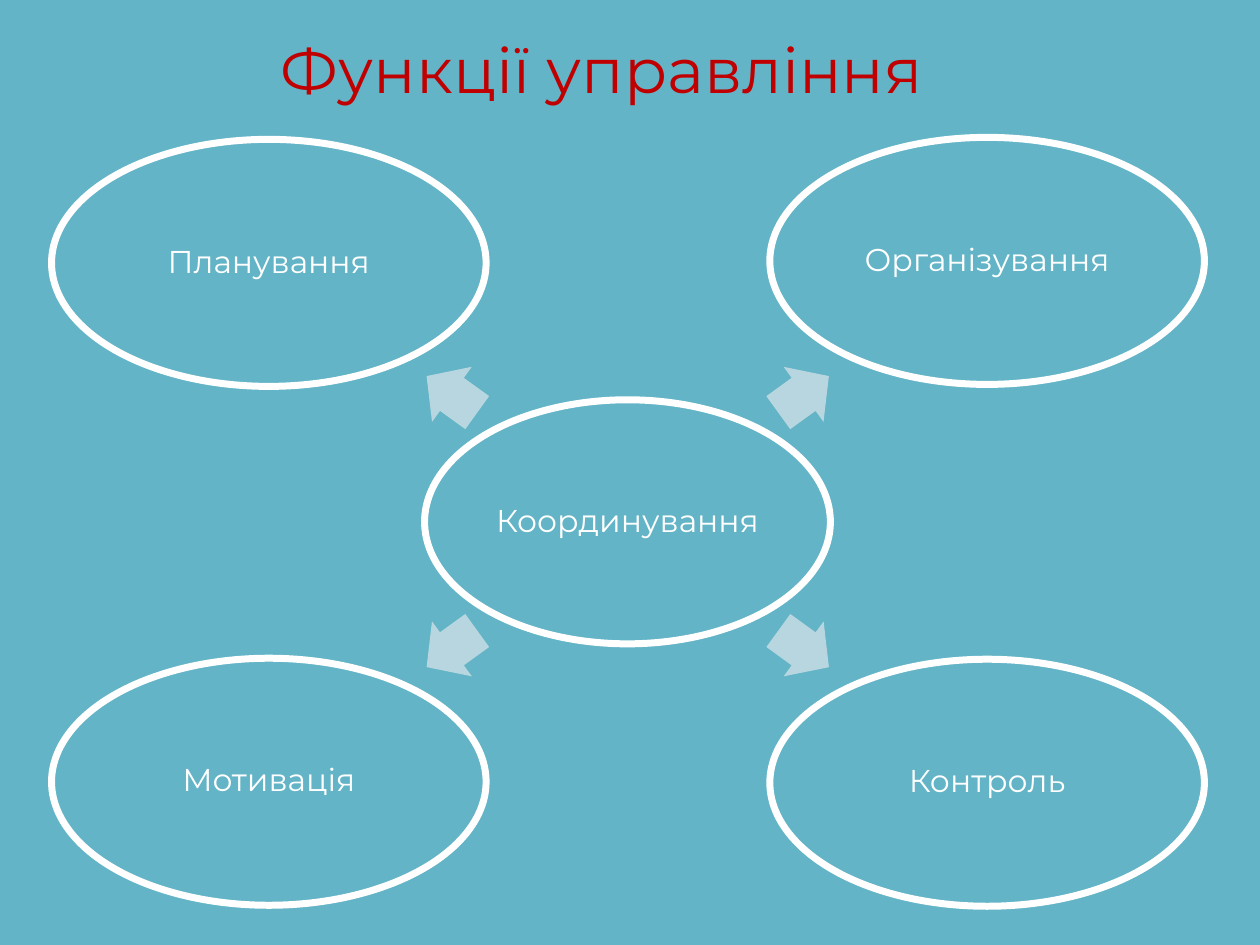
from pptx import Presentation
from pptx.dml.color import RGBColor
from pptx.enum import shapes, text
from pptx.util import Cm, Pt

TEAL = RGBColor(0x62, 0xB4, 0xC6)
PALE = RGBColor(0xB7, 0xD6, 0xDF)
WHITE = RGBColor(0xFF, 0xFF, 0xFF)
RED = RGBColor(0xC0, 0x00, 0x00)
FONT = "Montserrat"

# Centres and sizes in centimetres
HUB = ("Координування", 12.65, 10.52)
HUB_SIZE = (8.18, 4.92)
OUTER_SIZE = (8.76, 4.98)
ARROW_SIZE = (1.26, 1.37)

# Label, ellipse centre, arrow centre, arrow rotation
FUNCTIONS = [
    ("Планування", (5.42, 5.3), (9.11, 7.95), 215.8),
    ("Організування", (19.9, 5.26), (16.2, 7.95), 324.1),
    ("Контроль", (19.9, 15.78), (16.2, 13.08), 36),
    ("Мотивація", (5.42, 15.76), (9.11, 13.08), 144.1),
]


def set_attributes(target, values):
    for name, value in values.items():
        setattr(target, name, value)


def write(frame, content, size, color, align, **frame_format):
    set_attributes(frame, {"word_wrap": True, **frame_format})
    para = frame.paragraphs[0]
    para.alignment = align
    span = para.add_run()
    span.text = content
    set_attributes(span.font, {"name": FONT, "size": Pt(size)})
    span.font.color.rgb = color
    return para


def add_centred(page, kind, center, size, fill):
    (x, y), (width, height) = center, size
    shape = page.shapes.add_shape(
        kind, Cm(x - width / 2), Cm(y - height / 2), Cm(width), Cm(height))
    shape.shadow.inherit = False
    shape.fill.solid()
    shape.fill.fore_color.rgb = fill
    return shape


def add_ellipse(page, label, center, size):
    ellipse = add_centred(page, shapes.MSO_SHAPE.OVAL, center, size, TEAL)
    ellipse.line.color.rgb = WHITE
    ellipse.line.width = Pt(4)
    margins = {f"margin_{side}": Cm(0.08)
               for side in ("left", "top", "right", "bottom")}
    para = write(ellipse.text_frame, label, 18, WHITE, text.PP_ALIGN.CENTER,
                 vertical_anchor=text.MSO_ANCHOR.MIDDLE, **margins)
    para.line_spacing = 0.9


def add_arrow(page, center, rotation):
    arrow = add_centred(
        page, shapes.MSO_SHAPE.RIGHT_ARROW, center, ARROW_SIZE, PALE)
    arrow.line.fill.background()
    arrow.rotation = rotation
    arrow.adjustments[0] = 0.6
    arrow.adjustments[1] = 0.5


def add_title(page, content):
    title = page.shapes.title
    set_attributes(title, {"left": Cm(5.41), "top": Cm(0.48),
                           "width": Cm(14.5), "height": Cm(1.8)})
    write(title.text_frame, content, 36, RED, text.PP_ALIGN.LEFT,
          vertical_anchor=text.MSO_ANCHOR.TOP,
          auto_size=text.MSO_AUTO_SIZE.NONE)


def main():
    deck = Presentation()
    set_attributes(deck, {"slide_width": Cm(25.4), "slide_height": Cm(19.05)})
    page = deck.slides.add_slide(deck.slide_layouts.get_by_name("Title Only"))
    page.background.fill.solid()
    page.background.fill.fore_color.rgb = TEAL

    add_title(page, "Функції управління")

    # Hub with an arrow to each function around it
    label, *center = HUB
    add_ellipse(page, label, center, HUB_SIZE)
    for label, center, arrow_center, rotation in FUNCTIONS:
        add_arrow(page, arrow_center, rotation)
        add_ellipse(page, label, center, OUTER_SIZE)

    deck.save("out.pptx")


if __name__ == "__main__":
    main()
